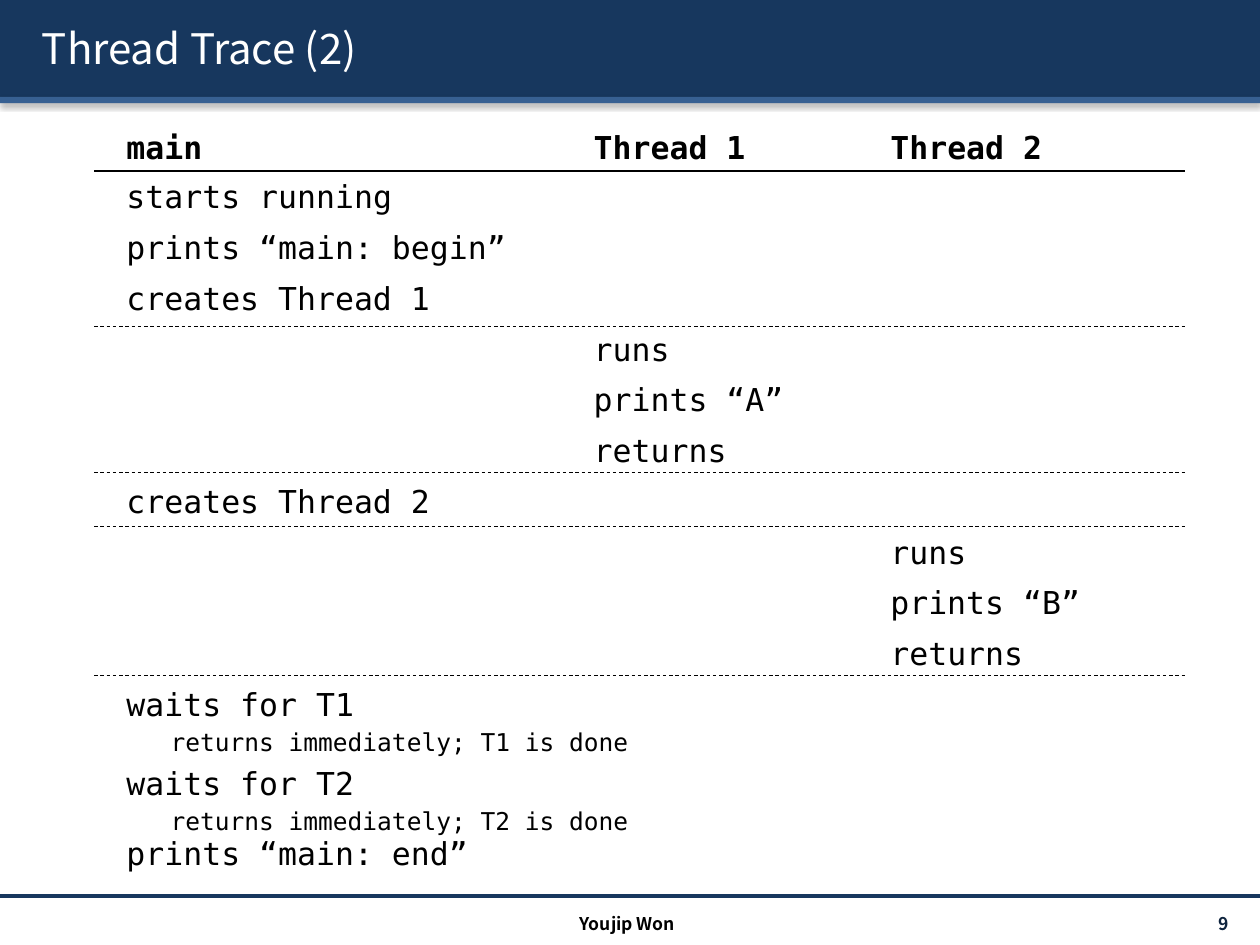
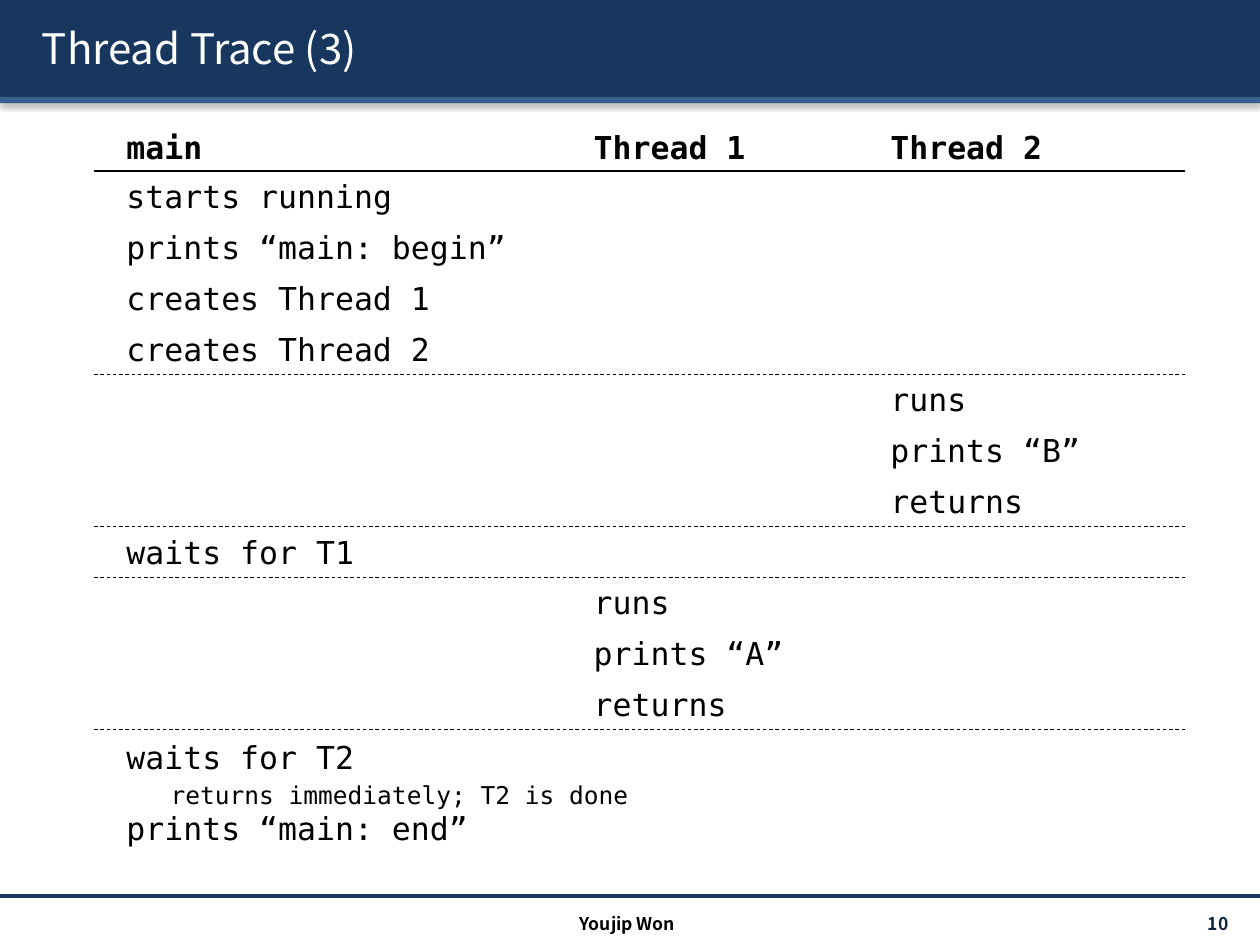
"""Builds two slides that trace the order in which threads run."""
from dataclasses import dataclass

from lxml.etree import SubElement
from pptx import Presentation
from pptx.dml.color import RGBColor
from pptx.enum.dml import MSO_LINE
from pptx.enum.shapes import MSO_CONNECTOR, MSO_SHAPE
from pptx.enum.text import MSO_ANCHOR, MSO_AUTO_SIZE, PP_ALIGN
from pptx.oxml.ns import qn
from pptx.util import Pt


@dataclass(frozen=True)
class Theme:
    navy: str = "17375E"
    blue: str = "376092"
    ink: str = "000000"
    page: str = "0F243E"
    white: str = "FFFFFF"
    sans: str = "Noto Sans CJK KR"
    mono: str = "DejaVu Sans Mono"
    title: int = 24
    step: int = 18
    note: int = 14
    footer: int = 10


WIDTH, HEIGHT = 720, 540
COLUMNS = {"main": 65.2, "Thread 1": 332.2, "Thread 2": 501.7}
HEADER_TOP, FIRST_ROW, ROW, NOTE_ROW = 69.8, 97.8, 29, 24.2
RULE_LEFT, RULE_RIGHT = 53.8, 677.3
NOTE_INDENT, NOTE_DROP, END_DROP = 25.2, 24, 40.3
MONO_ADVANCE, INSET = 0.61, 7.2

START = ["starts running", "prints “main: begin”", "creates Thread 1"]
RUN_A = ("Thread 1", ["runs", "prints “A”", "returns"])
RUN_B = ("Thread 2", ["runs", "prints “B”", "returns"])

TRACES = [
    {
        "title": "Thread Trace (2)",
        "page": 9,
        "blocks": [("main", START), RUN_A, ("main", ["creates Thread 2"]), RUN_B],
        "rule_shifts": [2, -2, 0, -2],
        "waits": {"T1": 388, "T2": 432.8},
    },
    {
        "title": "Thread Trace (3)",
        "page": 10,
        "blocks": [("main", START + ["creates Thread 2"]), RUN_B,
                   ("main", ["waits for T1"]), RUN_A],
        "rule_shifts": [0, 0, 0, 0],
        "waits": {"T2": 418.3},
    },
]


def add_shadow(effects, color, alpha, blur, dist, angle):
    shadow = SubElement(effects, qn("a:outerShdw"), blurRad=str(Pt(blur)),
                        dist=str(Pt(dist)), dir=str(angle * 60000),
                        algn="tl", rotWithShape="0")
    clr = SubElement(shadow, qn("a:srgbClr"), val=color)
    SubElement(clr, qn("a:alpha"), val=str(alpha * 1000))


class Deck:
    def __init__(self, theme):
        self.theme = theme
        self.prs = Presentation()
        self.prs.slide_width, self.prs.slide_height = Pt(WIDTH), Pt(HEIGHT)
        self.s = None

    def new_slide(self, title, page):
        t = self.theme
        self.s = self.prs.slides.add_slide(self.prs.slide_layouts[6])
        self.band(0, 55.4, t.navy)
        self.band(55.4, 3.6, t.blue)
        self.line(0, WIDTH, 512, color=t.navy, width=2)
        self.text(title, 16.9, 4.3, 692, 46, size=t.title, color=t.white, shadow=True)
        self.text(f"{page} ", 627, 519, 84.3, 17.3, size=t.footer, color=t.page,
                  bold=True, align=PP_ALIGN.RIGHT)
        self.text("Youjip Won", 239, 519, 239, 17.3, size=t.footer,
                  bold=True, align=PP_ALIGN.CENTER)

    def band(self, top, height, color):
        sp = self.s.shapes.add_shape(MSO_SHAPE.RECTANGLE, 0, Pt(top), Pt(WIDTH), Pt(height))
        sp.shadow.inherit = False
        sp.fill.solid()
        sp.fill.fore_color.rgb = RGBColor.from_string(color)
        sp.line.fill.background()
        effects = sp._element.spPr.find(qn("a:effectLst"))
        add_shadow(effects, self.theme.ink, 38, 3.1, 1.6, 90)

    def line(self, left, right, y, color=None, width=1.0, dash=None):
        cx = self.s.shapes.add_connector(MSO_CONNECTOR.STRAIGHT,
                                         Pt(left), Pt(y), Pt(right), Pt(y))
        cx.line.color.rgb = RGBColor.from_string(color or self.theme.ink)
        cx.line.width = Pt(width)
        if dash:
            cx.line.dash_style = dash
        SubElement(cx._element.spPr, qn("a:effectLst"))

    def text(self, text, left, top, width, height, *, size, font=None, color=None,
             bold=False, align=PP_ALIGN.LEFT, anchor=MSO_ANCHOR.MIDDLE,
             wrap=True, margin=0, shadow=False):
        sp = self.s.shapes.add_textbox(Pt(left), Pt(top), Pt(width), Pt(height))
        tf = sp.text_frame
        tf.word_wrap = wrap
        tf.auto_size = MSO_AUTO_SIZE.NONE if wrap else MSO_AUTO_SIZE.SHAPE_TO_FIT_TEXT
        tf.vertical_anchor = anchor
        tf.margin_top = tf.margin_bottom = Pt(margin)
        p = tf.paragraphs[0]
        p.alignment = align
        r = p.add_run()
        r.text = text
        r.font.size, r.font.bold = Pt(size), bold
        r.font.color.rgb = RGBColor.from_string(color or self.theme.ink)
        rpr = r.font._element
        if shadow:
            effects = SubElement(rpr, qn("a:effectLst"))
            add_shadow(effects, self.theme.ink, 100, 0, 2, 45)
        r.font.name = font or self.theme.sans
        SubElement(rpr, qn("a:ea"), typeface=r.font.name)

    def code(self, text, left, top, size=None, height=ROW, bold=False):
        size = size or self.theme.step
        width = len(text) * MONO_ADVANCE * size + 2 * INSET
        self.text(text, left, top, width, height, size=size, bold=bold,
                  font=self.theme.mono, anchor=MSO_ANCHOR.TOP, wrap=False, margin=3.6)

    def trace(self, blocks, rule_shifts, waits):
        for name, left in COLUMNS.items():
            self.code(name, left, HEADER_TOP, bold=True)
        self.line(RULE_LEFT, RULE_RIGHT, FIRST_ROW, width=1.2)
        y = FIRST_ROW
        for (column, steps), shift in zip(blocks, rule_shifts):
            for step in steps:
                self.code(step, COLUMNS[column], y)
                y += ROW
            self.line(RULE_LEFT, RULE_RIGHT, y + shift, width=0.5, dash=MSO_LINE.DASH)
        left = COLUMNS["main"]
        for thread, y in waits.items():
            self.code(f"waits for {thread}", left, y)
            self.code(f"returns immediately; {thread} is done", left + NOTE_INDENT,
                      y + NOTE_DROP, size=self.theme.note, height=NOTE_ROW)
        self.code("prints “main: end”", left, y + END_DROP)


def main():
    deck = Deck(Theme())
    for trace in TRACES:
        deck.new_slide(trace["title"], trace["page"])
        deck.trace(trace["blocks"], trace["rule_shifts"], trace["waits"])
    deck.prs.save("out.pptx")


if __name__ == "__main__":
    main()
